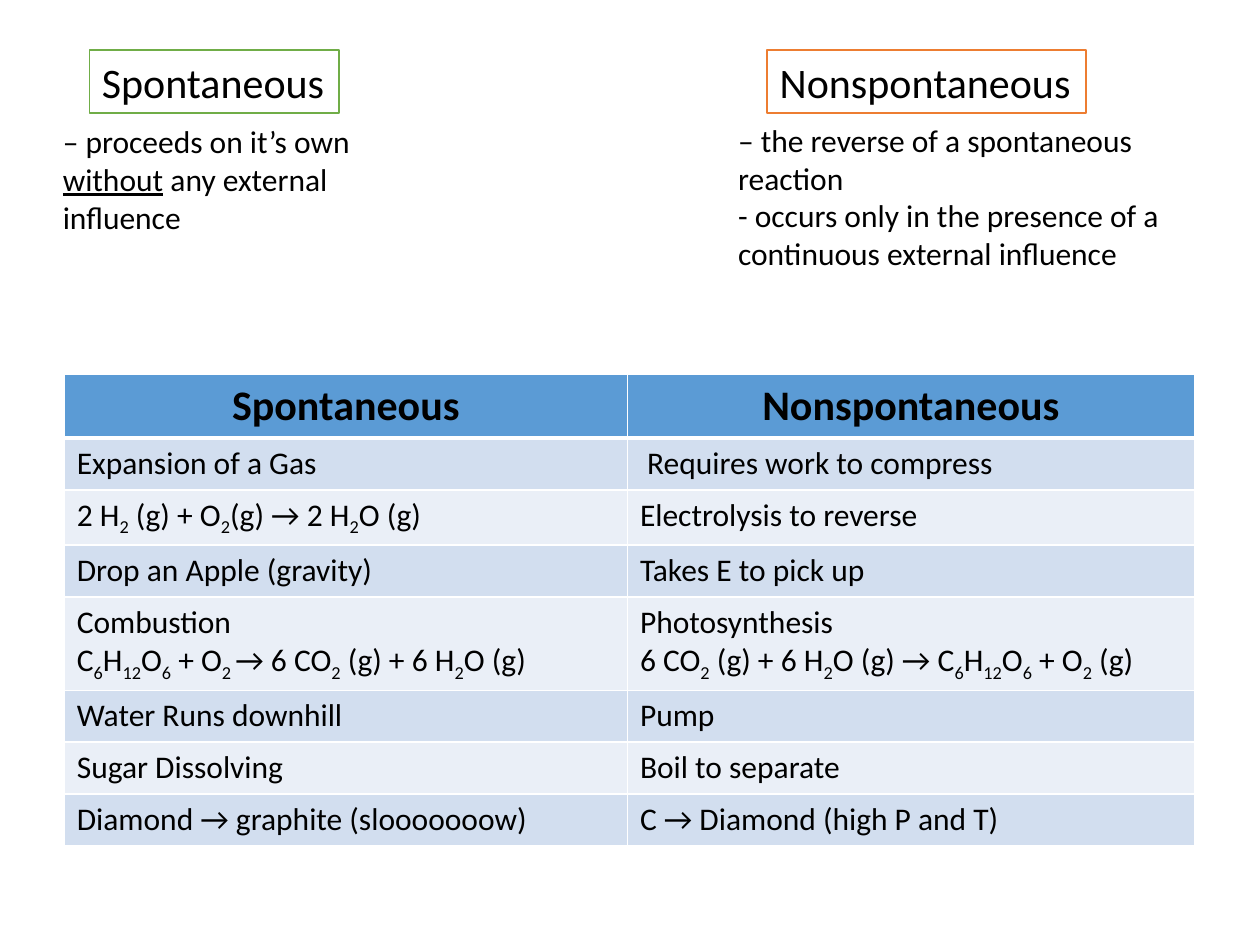
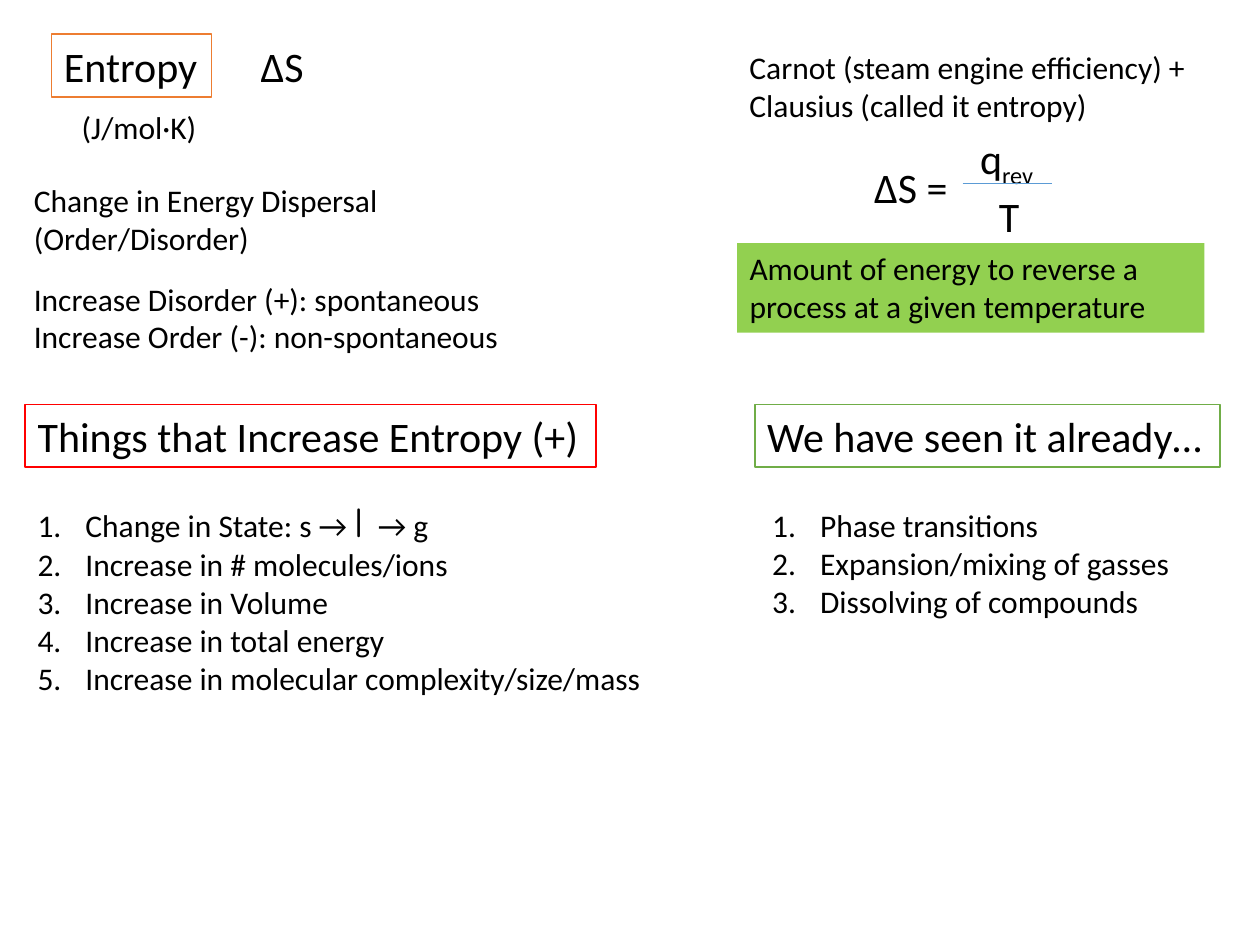
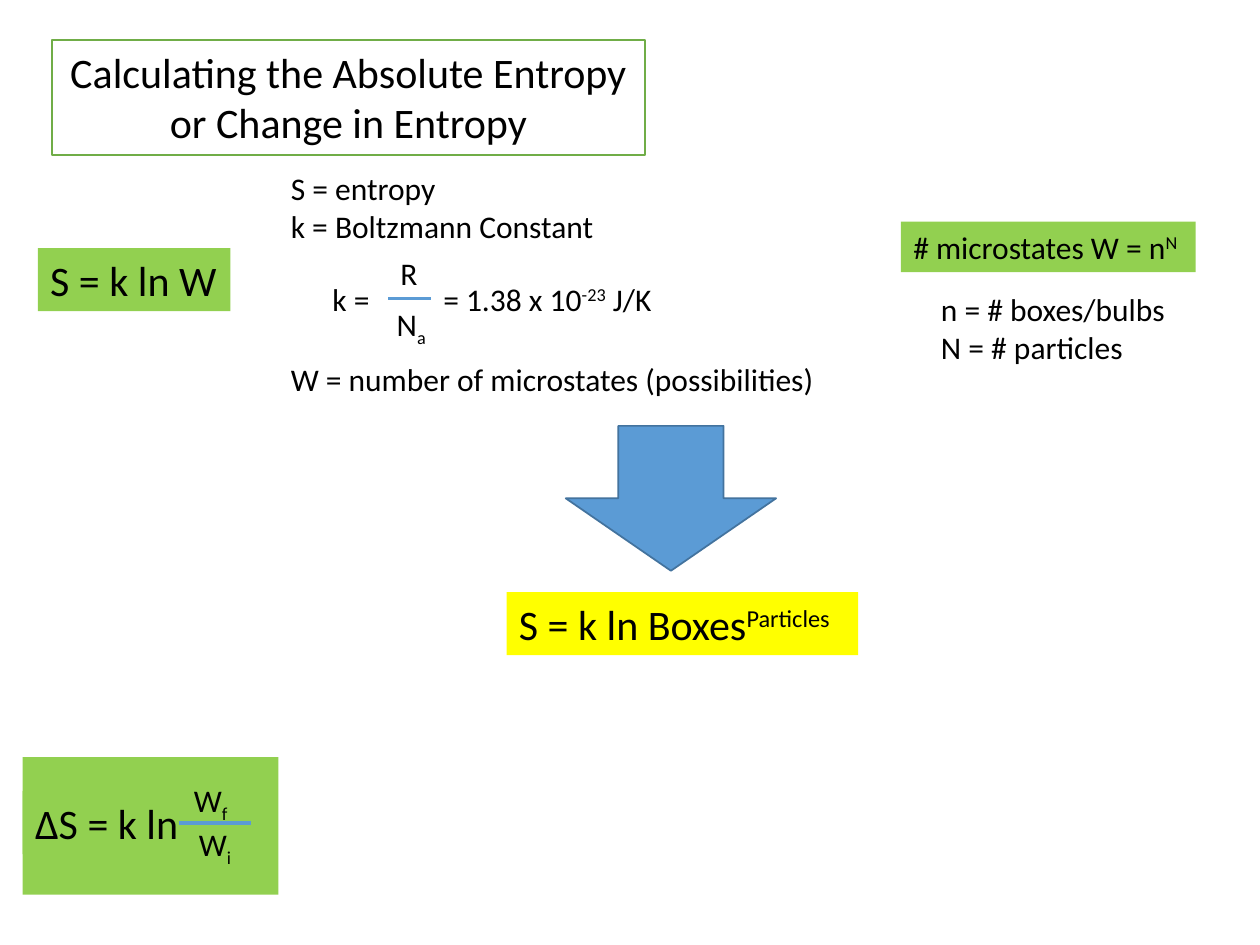
import pptx
import pptx.dml.color
import pptx.enum.shapes
import pptx.enum.text
import pptx.oxml.ns
import pptx.util
from lxml import etree
from pptx.util import Inches

# Shared look
FONT = "Calibri"
BODY, HEADING = 18, 24
BLACK, WHITE, BLUE, DARK_BLUE = "000000", "FFFFFF", "5B9BD5", "43739E"
GREEN, ORANGE, RED = "70AD47", "ED7D31", "FF0000"
LIME, YELLOW = "92D050", "FFFF00"
BANDS = ["D2DEEF", "EAEFF7"]

# Inline marks: each pair of marks encloses text in that format
MARKS = {
    "~": {"baseline": "-25000"},
    "^": {"baseline": "30000"},
    "*": {"underline": True},
    "`": {"name": "Comic Neue", "size": pptx.util.Pt(HEADING)},
}

EXAMPLES = [
    ("Spontaneous", "Nonspontaneous"),
    ("Expansion of a Gas", " Requires work to compress"),
    ("2 H~2~ (g) + O~2~(g) → 2 H~2~O (g)", "Electrolysis to reverse"),
    ("Drop an Apple (gravity)", "Takes E to pick up"),
    ("Combustion\nC~6~H~12~O~6~ + O~2 ~→ 6 CO~2~ (g) + 6 H~2~O (g)",
     "Photosynthesis\n6 CO~2~ (g) + 6 H~2~O (g) → C~6~H~12~O~6~ + O~2~ (g)"),
    ("Water Runs downhill", "Pump"),
    ("Sugar Dissolving", "Boil to separate"),
    ("Diamond → graphite (slooooooow)", "C → Diamond (high P and T)"),
]


def colour(value):
    return pptx.dml.color.RGBColor.from_string(value)


def paint(target, value):
    target.solid()
    target.fore_color.rgb = colour(value)


def split_marks(text):
    """Give (text, mark) pairs; mark is empty for plain text."""
    pieces, mark = [("", "")], ""
    for letter in text:
        if letter in MARKS:
            mark = "" if mark else letter
            pieces.append(("", mark))
        else:
            pieces[-1] = (pieces[-1][0] + letter, mark)
    return [piece for piece in pieces if piece[0]]


def write(frame, text, size=BODY, bold=False, centred=False, numbered=False):
    for index, line in enumerate(text.split("\n")):
        para = frame.paragraphs[0] if index == 0 else frame.add_paragraph()
        if centred:
            para.alignment = pptx.enum.text.PP_ALIGN.CENTER
        if numbered:
            number_paragraph(para)
        for piece, mark in split_marks(line):
            span = para.add_run()
            span.text = piece
            span.font.color.rgb = colour(BLACK)
            formats = {"name": FONT, "size": pptx.util.Pt(size), "bold": bold}
            formats.update(MARKS.get(mark, {}))
            baseline = formats.pop("baseline", None)
            for name, value in formats.items():
                setattr(span.font, name, value)
            if baseline:
                span._r.get_or_add_rPr().set("baseline", baseline)


def number_paragraph(para):
    settings = para._p.get_or_add_pPr()
    settings.set("marL", str(Inches(0.38)))
    settings.set("indent", str(Inches(-0.38)))
    etree.SubElement(settings, pptx.oxml.ns.qn("a:buAutoNum"), type="arabicPeriod")


def add_text(page, text, left, top, width, height, fill=None, line=None,
             wrap=False, **formats):
    box = page.shapes.add_textbox(Inches(left), Inches(top), Inches(width), Inches(height))
    box.text_frame.word_wrap = wrap
    box.text_frame.auto_size = pptx.enum.text.MSO_AUTO_SIZE.SHAPE_TO_FIT_TEXT
    if fill:
        paint(box.fill, fill)
    if line:
        box.line.color.rgb = colour(line)
        box.line.width = pptx.util.Pt(1)
    write(box.text_frame, text, **formats)
    return box


def add_heading(page, text, left, top, width, line, height=0.5, **formats):
    add_text(page, text, left, top, width, height, fill=WHITE, line=line,
             size=HEADING, **formats)


def add_shape(page, kind, left, top, width, height, fill, line=None):
    shape = page.shapes.add_shape(kind, Inches(left), Inches(top), Inches(width), Inches(height))
    shape.shadow.inherit = False
    paint(shape.fill, fill)
    if line:
        shape.line.color.rgb = colour(line)
        shape.line.width = pptx.util.Pt(1)
    else:
        shape.line.fill.background()


def add_fraction_bar(page, left, right, top, weight):
    bar = page.shapes.add_connector(pptx.enum.shapes.MSO_CONNECTOR.STRAIGHT,
                                    Inches(left), Inches(top), Inches(right), Inches(top))
    bar.line.color.rgb = colour(BLUE)
    bar.line.width = pptx.util.Pt(weight)
    etree.SubElement(bar._element.spPr, pptx.oxml.ns.qn("a:effectLst"))


def add_cell_borders(cell, widths):
    settings = cell._tc.get_or_add_tcPr()
    for side, width in widths.items():
        border = etree.SubElement(settings, pptx.oxml.ns.qn("a:ln" + side),
                                  w=str(pptx.util.Pt(width)))
        solid = etree.SubElement(border, pptx.oxml.ns.qn("a:solidFill"))
        etree.SubElement(solid, pptx.oxml.ns.qn("a:srgbClr"), val=WHITE)


def add_example_table(page, rows, left, top, column_widths, row_height):
    frame = page.shapes.add_table(len(rows), len(column_widths), Inches(left), Inches(top),
                                  Inches(sum(column_widths)), Inches(row_height * len(rows)))
    table = frame.table
    for column, width in zip(table.columns, column_widths):
        column.width = Inches(width)
    for index, row in enumerate(rows):
        header = index == 0
        for cell, text in zip(table.rows[index].cells, row):
            add_cell_borders(cell, {"L": 1, "R": 1, "T": 3 if index == 1 else 1,
                                    "B": 3 if header else 1})
            paint(cell.fill, BLUE if header else BANDS[(index - 1) % 2])
            write(cell.text_frame, text, size=HEADING if header else BODY,
                  bold=header, centred=header)


def build_spontaneity(page):
    add_example_table(page, EXAMPLES, 0.51, 2.97, [4.47, 4.5], 0.41)
    add_text(page, "– proceeds on it’s own *without* any external influence",
             0.4, 0.92, 3.15, 1.01, wrap=True)
    add_text(page, "– the reverse of a spontaneous reaction\n"
             "- occurs only in the presence of a continuous external influence",
             5.76, 0.91, 4.07, 1.31, wrap=True)
    add_heading(page, "Spontaneous", 0.71, 0.4, 1.98, GREEN)
    add_heading(page, "Nonspontaneous", 6.09, 0.4, 2.53, ORANGE)


def build_entropy(page):
    # Definition
    add_heading(page, "Entropy", 0.41, 0.27, 1.27, ORANGE)
    add_text(page, "ΔS", 1.97, 0.27, 0.55, 0.5, size=HEADING)
    add_text(page, "(J/mol·K)", 0.55, 0.81, 1.12, 0.4)
    add_text(page, "Change in Energy Dispersal\n(Order/Disorder)", 0.17, 1.39, 3.02, 0.71)
    add_text(page, "Increase Disorder (+): spontaneous\nIncrease Order (-): non-spontaneous",
             0.17, 2.17, 3.92, 0.71)

    # Formula
    add_text(page, "Carnot (steam engine efficiency) +\nClausius (called it entropy)",
             5.85, 0.33, 3.77, 0.71)
    add_text(page, "ΔS =", 6.84, 1.23, 0.86, 0.5, size=HEADING)
    add_text(page, "q~rev~", 7.68, 1, 0.67, 0.5, size=HEADING)
    add_fraction_bar(page, 7.64, 8.35, 1.46, 0.5)
    add_text(page, "T", 7.83, 1.46, 0.37, 0.5, size=HEADING)
    add_text(page, "Amount of energy to reverse a process at a given temperature",
             5.85, 1.93, 3.71, 0.71, fill=LIME, wrap=True)

    # Numbered lists
    add_heading(page, "Things that Increase Entropy (+)", 0.2, 3.21, 4.53, RED)
    add_text(page, "Change in State: s → `l `→ g\nIncrease in # molecules/ions\n"
             "Increase in Volume\nIncrease in total energy\n"
             "Increase in molecular complexity/size/mass",
             0.2, 3.88, 5.03, 1.72, numbered=True)
    add_heading(page, "We have seen it already…", 5.99, 3.21, 3.69, GREEN)
    add_text(page, "Phase transitions\nExpansion/mixing of gasses\nDissolving of compounds",
             6.03, 3.97, 3.38, 1.01, numbered=True)


def build_calculation(page):
    shapes = pptx.enum.shapes.MSO_SHAPE
    add_heading(page, "Calculating the Absolute Entropy or Change in Entropy",
                0.41, 0.32, 4.71, GREEN, height=0.91, wrap=True, centred=True)
    add_text(page, "S = k ln W", 0.3, 1.97, 1.53, 0.5, fill=LIME, size=HEADING)

    # Meaning of the symbols, with room for the fraction before the last line
    symbols = add_text(page, "S = entropy\nk = Boltzmann Constant\n"
                       "W = number of microstates (possibilities)", 2.21, 1.29, 4.4, 1.92)
    symbols.text_frame.paragraphs[-1].space_before = pptx.util.Pt(66)
    add_text(page, "k =", 2.54, 2.17, 0.62, 0.4)
    add_text(page, "R", 3.08, 1.97, 0.34, 0.4)
    add_text(page, "N~a~", 3.05, 2.37, 0.45, 0.4)
    add_fraction_bar(page, 3.08, 3.42, 2.37, 2)
    add_text(page, "= 1.38 x 10^-23^ J/K", 3.42, 2.17, 1.9, 0.4)

    # Change in entropy
    add_shape(page, shapes.RECTANGLE, 0.18, 6.01, 2.03, 1.09, LIME)
    add_text(page, "ΔS = k ln", 0.18, 6.28, 1.35, 0.5, fill=LIME, size=HEADING)
    add_text(page, "W~f~", 1.44, 6.15, 0.48, 0.4)
    add_fraction_bar(page, 1.42, 1.99, 6.53, 2)
    add_text(page, "W~i~", 1.48, 6.5, 0.48, 0.4)

    # Microstates
    add_text(page, "# microstates W = n^N^", 7.15, 1.76, 2.34, 0.4, fill=LIME)
    add_text(page, "n = # boxes/bulbs\nN = # particles", 7.37, 2.25, 2, 0.71)
    add_text(page, "S = k ln Boxes^Particles^", 4.02, 4.7, 2.79, 0.5, fill=YELLOW, size=HEADING)
    add_shape(page, shapes.DOWN_ARROW, 4.49, 3.38, 1.67, 1.15, BLUE, DARK_BLUE)


def main():
    deck = pptx.Presentation()
    deck.slide_width, deck.slide_height = Inches(10), Inches(7.5)
    for build in (build_spontaneity, build_entropy, build_calculation):
        page = deck.slides.add_slide(deck.slide_layouts[6])
        paint(page.background.fill, WHITE)
        build(page)
    deck.save("out.pptx")


if __name__ == "__main__":
    main()
